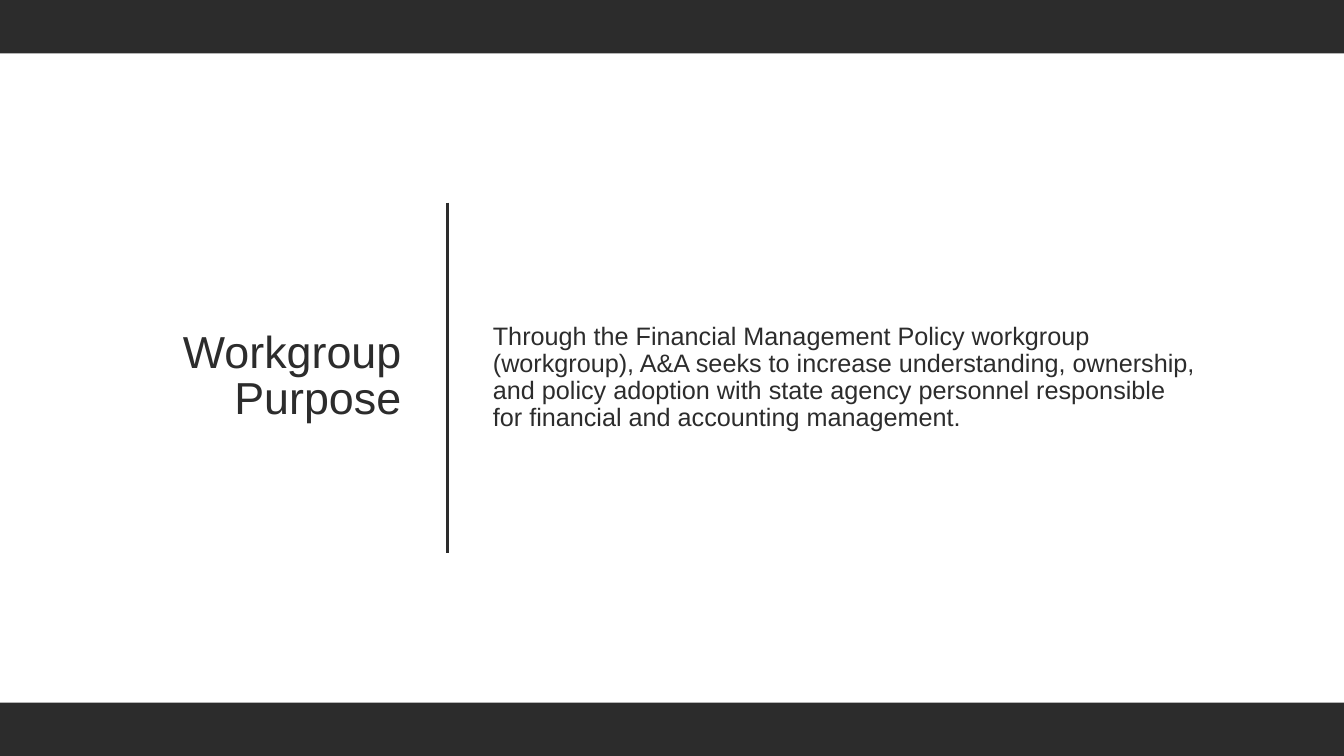
"""Build the Workgroup Purpose slide."""
from typing import NamedTuple

from lxml.etree import SubElement
from pptx import Presentation
from pptx.dml.color import RGBColor
from pptx.enum.shapes import MSO_CONNECTOR, MSO_SHAPE
from pptx.enum.text import MSO_ANCHOR, PP_ALIGN
from pptx.oxml.ns import qn
from pptx.util import Inches, Pt

DARK = "2C2C2C"
WIDTH, HEIGHT = 13.33, 7.5
BAND_HEIGHT = 0.53


class Box(NamedTuple):
    left: float
    top: float
    width: float
    height: float


def color(value: str) -> RGBColor:
    return RGBColor.from_string(value)


def add_band(s, box: Box) -> None:
    sp = s.shapes.add_shape(MSO_SHAPE.RECTANGLE, *map(Inches, box))
    sp.shadow.inherit = False
    sp.fill.solid()
    sp.fill.fore_color.rgb = color(DARK)
    sp.line.fill.background()


def add_divider(s, x: float, top: float, bottom: float) -> None:
    ln = s.shapes.add_connector(MSO_CONNECTOR.STRAIGHT, *map(Inches, (x, top, x, bottom)))
    ln.line.color.rgb = color(DARK)
    ln.line.width = Pt(2)
    SubElement(ln._element.spPr, qn("a:effectLst"))


def add_text(s, text: str, box: Box, *, size: float, spacing: float,
             align: PP_ALIGN = PP_ALIGN.LEFT) -> None:
    tf = s.shapes.add_textbox(*map(Inches, box)).text_frame
    tf.word_wrap = True
    tf.vertical_anchor = MSO_ANCHOR.MIDDLE
    p = tf.paragraphs[0]
    p.alignment = align
    p.line_spacing = spacing
    r = p.add_run()
    r.text = text
    r.font.name = "Arial"
    r.font.size = Pt(size)
    r.font.color.rgb = color(DARK)


def main() -> None:
    prs = Presentation()
    prs.slide_width, prs.slide_height = Inches(WIDTH), Inches(HEIGHT)
    s = prs.slides.add_slide(prs.slide_layouts[6])
    for top in (0, HEIGHT - BAND_HEIGHT):
        add_band(s, Box(0, top, WIDTH, BAND_HEIGHT))
    add_text(s, "Workgroup Purpose", Box(0.7, 1.45, 3.38, 4.6),
             size=32, spacing=0.85, align=PP_ALIGN.RIGHT)
    add_divider(s, 4.44, 2.01, 5.49)
    add_text(s, "Through the Financial Management Policy workgroup (workgroup), "
             "A&A seeks to increase understanding, ownership, and policy adoption "
             "with state agency personnel responsible for financial and accounting "
             "management.", Box(4.79, 1.23, 7.22, 5.04), size=18, spacing=0.9)
    prs.save("out.pptx")


if __name__ == "__main__":
    main()
